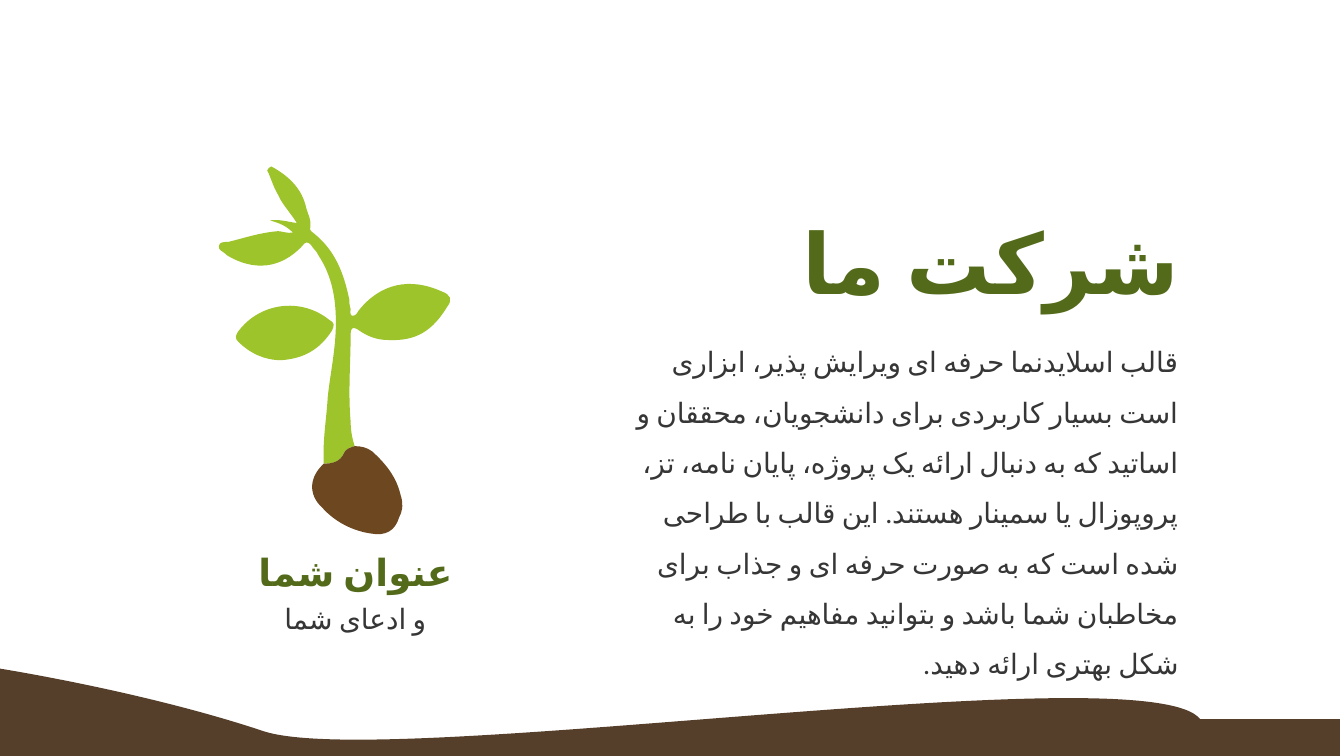
from dataclasses import dataclass

from lxml import etree
from pptx import Presentation
from pptx.dml.color import RGBColor
from pptx.enum.lang import MSO_LANGUAGE_ID
from pptx.enum.text import MSO_ANCHOR, PP_ALIGN
from pptx.oxml.ns import qn
from pptx.util import Pt

EMU_PER_PX = 9144  # 100 px to the inch
SLIDE_WIDTH = 1000
INSET = 10
CURVE_STEPS = 12
BLANK_LAYOUT = 6
TOP, MIDDLE = MSO_ANCHOR.TOP, MSO_ANCHOR.MIDDLE
RIGHT, CENTER = PP_ALIGN.RIGHT, PP_ALIGN.CENTER
PERSIAN = MSO_LANGUAGE_ID.FARSI


@dataclass(frozen=True)
class TextStyle:
    font: str
    size: int
    color: str
    bold: bool = False


@dataclass(frozen=True)
class Theme:
    soil: str = "553F2B"
    leaf: str = "9EC42C"
    seed: str = "6D4720"
    title: TextStyle = TextStyle("Lato", 45, "526A19", True)
    caption: TextStyle = TextStyle("Lato", 20, "526A19", True)
    body: TextStyle = TextStyle("Calibri", 15, "363636")


# Outlines: a start point, then one row per segment. A row of six is a
# cubic curve (two control points and an end); a row of two is a line.
GROUND = ((-3, 497), [
    (-3, 497, 106, 514, 196, 544), (287, 574, 853, 485, 893, 535),
    (997, 535), (997, 565), (-3, 566),
])
STEM = ((241, 345), [
    (240, 328, 243, 312, 244, 295), (246, 277, 250, 259, 250, 240),
    (250, 222, 247, 205, 237, 190), (236, 187, 233, 185, 232, 183),
    (229, 179, 227, 180, 225, 183), (209, 200, 189, 202, 169, 190),
    (169, 190, 168, 190, 168, 189), (166, 187, 162, 186, 163, 183),
    (163, 180, 167, 180, 170, 180), (182, 177, 194, 173, 207, 172),
    (210, 172, 214, 174, 218, 173), (213, 168, 208, 166, 201, 164),
    (208, 163, 214, 165, 221, 166), (216, 158, 210, 152, 207, 145),
    (204, 140, 202, 134, 200, 129), (199, 128, 198, 126, 200, 125),
    (201, 123, 203, 124, 204, 125), (216, 132, 225, 141, 228, 155),
    (229, 159, 232, 164, 231, 169), (230, 171, 232, 173, 234, 174),
    (250, 187, 256, 204, 260, 223), (260, 225, 260, 227, 261, 230),
    (261, 231, 260, 234, 262, 235), (265, 235, 266, 233, 267, 231),
    (283, 211, 305, 206, 329, 217), (335, 219, 337, 223, 333, 228),
    (322, 246, 310, 254, 289, 253), (280, 253, 273, 250, 266, 245),
    (263, 243, 261, 244, 261, 248), (261, 270, 259, 292, 261, 314),
    (261, 320, 262, 326, 264, 332), (261, 333, 257, 334, 256, 337),
    (253, 344, 247, 345, 241, 345),
])
SEED = ((241, 345), [
    (247, 345, 253, 344, 256, 337), (257, 334, 261, 333, 264, 332),
    (269, 332, 273, 333, 277, 336), (287, 345, 295, 355, 298, 368),
    (300, 374, 300, 379, 297, 385), (294, 395, 287, 399, 276, 397),
    (262, 395, 249, 388, 240, 378), (229, 368, 230, 355, 241, 345),
])
LOWER_LEAF = ((209, 268), [
    (197, 268, 186, 263, 177, 254), (175, 252, 175, 250, 177, 247),
    (193, 225, 224, 221, 245, 238), (249, 240, 249, 242, 247, 246),
    (238, 260, 226, 267, 209, 268),
])


def emu(px):
    return round(px * EMU_PER_PX)


def flatten(start, segments):
    """Return points along the outline, enough to find its extents."""
    points, here = [], start
    for segment in segments:
        end = segment[-2:]
        if len(segment) == 2:
            points.append(end)
        else:
            first, second = segment[:2], segment[2:4]
            for step in range(1, CURVE_STEPS + 1):
                t = step / CURVE_STEPS
                u = 1 - t
                points.append(tuple(
                    u**3 * a + 3 * u * u * t * b + 3 * u * t * t * c + t**3 * d
                    for a, b, c, d in zip(here, first, second, end)))
        here = end
    return points


def restore_curves(shape, segments):
    """Replace the sampled lines of a freeform with its true curves."""
    left, top = shape.left, shape.top
    outline = next(shape._element.iter(qn("a:path")))
    for child in list(outline)[1:]:
        outline.remove(child)
    for segment in segments:
        kind = "a:lnTo" if len(segment) == 2 else "a:cubicBezTo"
        command = etree.SubElement(outline, qn(kind))
        for x, y in zip(segment[::2], segment[1::2]):
            etree.SubElement(command, qn("a:pt"),
                             x=str(emu(x) - left), y=str(emu(y) - top))
    etree.SubElement(outline, qn("a:close"))


class SlideMaker:
    def __init__(self, slide, theme):
        self.slide = slide
        self.theme = theme

    def text(self, words, style, left, top, width, height,
             align=CENTER, anchor=MIDDLE, spacing=1.0):
        box = self.slide.shapes.add_textbox(
            *(emu(length) for length in (left, top, width, height)))
        frame = box.text_frame
        frame.word_wrap = True
        frame.vertical_anchor = anchor
        frame.margin_left = frame.margin_right = emu(INSET)
        frame.margin_top = frame.margin_bottom = emu(INSET)
        para = frame.paragraphs[0]
        para.alignment = align
        para.line_spacing = spacing
        para._p.get_or_add_pPr().set("rtl", "1")
        span = para.add_run()
        span.text = words
        font = span.font
        font.name, font.size, font.bold = style.font, Pt(style.size), style.bold
        font.color.rgb = RGBColor.from_string(style.color)
        font.language_id = PERSIAN
        script_font = etree.SubElement(span._r.get_or_add_rPr(), qn("a:cs"))
        script_font.set("typeface", style.font)

    def outline(self, curve, color, group=None):
        shapes = (group or self.slide).shapes
        start, segments = curve
        builder = shapes.build_freeform(*map(emu, start), scale=1.0)
        builder.add_line_segments(
            [(emu(x), emu(y)) for x, y in flatten(start, segments)], close=True)
        shape = builder.convert_to_shape()
        restore_curves(shape, segments)
        shape.shadow.inherit = False
        shape.fill.solid()
        shape.fill.fore_color.rgb = RGBColor.from_string(color)
        shape.line.fill.background()

    def sprout(self):
        group = self.slide.shapes.add_group_shape()
        self.outline(STEM, self.theme.leaf, group)
        self.outline(SEED, self.theme.seed, group)
        self.outline(LOWER_LEAF, self.theme.leaf, group)


def main():
    deck = Presentation()
    deck.slide_width = emu(SLIDE_WIDTH)
    deck.slide_height = emu(SLIDE_WIDTH * 9 / 16)
    page = deck.slides.add_slide(deck.slide_layouts[BLANK_LAYOUT])
    theme = Theme()
    maker = SlideMaker(page, theme)

    maker.text("شرکت ما", theme.title, 452, 154, 435, 80, align=RIGHT)
    maker.text(
        "قالب اسلایدنما حرفه ای ویرایش پذیر، ابزاری است بسیار کاربردی برای "
        "دانشجویان، محققان و اساتید که به دنبال ارائه یک پروژه، پایان نامه، "
        "تز، پروپوزال یا سمینار هستند. این قالب با طراحی شده است که به صورت "
        "حرفه ای و جذاب برای مخاطبان شما باشد و بتوانید مفاهیم خود را به شکل "
        "بهتری ارائه دهید.",
        theme.body, 452, 234, 435, 175, align=RIGHT, anchor=TOP, spacing=1.5)
    maker.text("عنوان شما", theme.caption, 151, 406, 227, 39)
    maker.text("و ادعای شما", theme.body, 151, 444, 227, 32)
    maker.outline(GROUND, theme.soil)
    maker.sprout()
    deck.save("out.pptx")


if __name__ == "__main__":
    main()
